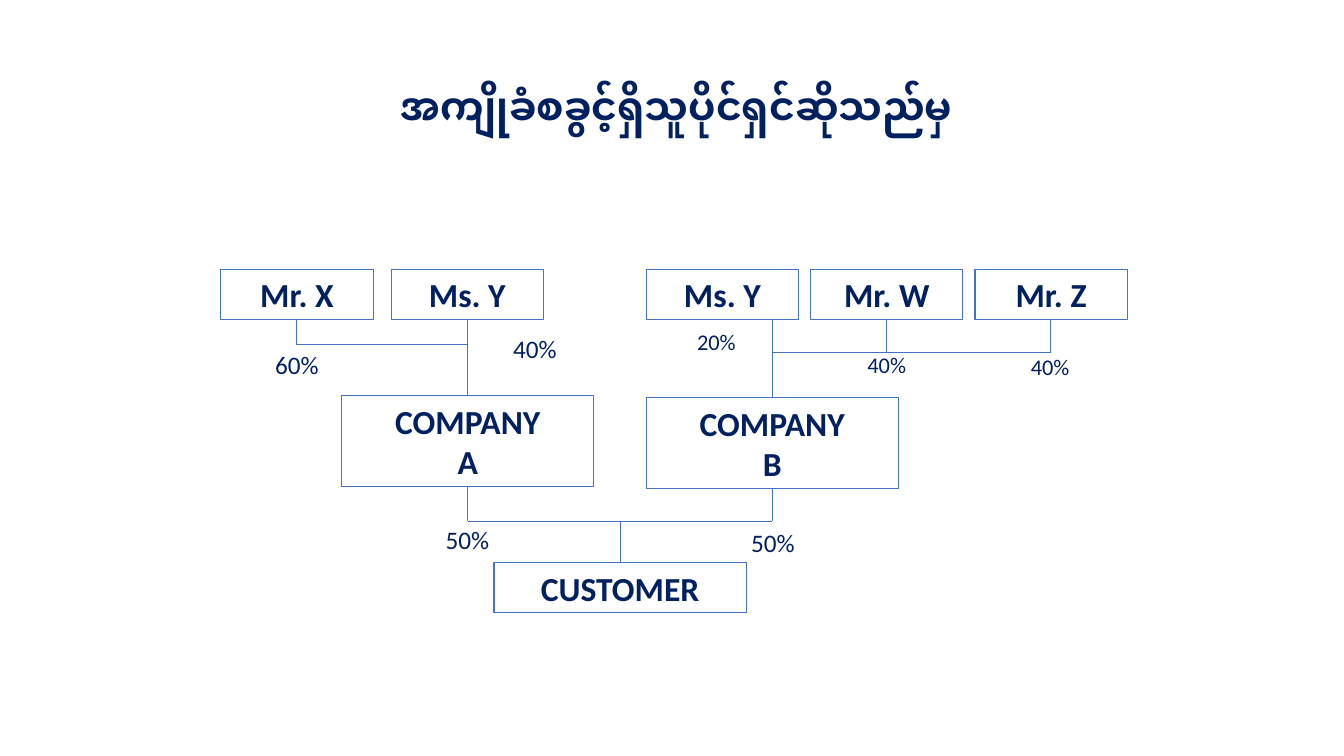
import pptx
import pptx.dml.color
import pptx.enum.shapes
import pptx.enum.text
import pptx.oxml.ns
import pptx.util
import lxml.etree

NAVY = pptx.dml.color.RGBColor(0x00, 0x20, 0x60)
BLUE = pptx.dml.color.RGBColor(0x44, 0x72, 0xC4)
EMU_PER_PX = 9144  # 100 px to the inch


def px(length):
    return pptx.util.Emu(length * EMU_PER_PX)


class OwnershipChart:
    """Draws on one slide; all lengths are whole px."""

    def __init__(self, slide):
        self.shapes = slide.shapes

    def set_text(self, shape, lines, size, font="Calibri", bold=False):
        frame = shape.text_frame
        frame.word_wrap = True
        frame.text = "\n".join(lines)
        for paragraph in frame.paragraphs:
            paragraph.alignment = pptx.enum.text.PP_ALIGN.CENTER
            paragraph.font.name = font
            paragraph.font.size = pptx.util.Pt(size)
            paragraph.font.bold = bold
            paragraph.font.color.rgb = NAVY

    def label(self, left, top, width, height, text, size, **style):
        label = self.shapes.add_textbox(px(left), px(top), px(width), px(height))
        self.set_text(label, [text], size, **style)

    def box(self, left, top, width, height, *lines):
        box = self.shapes.add_shape(
            pptx.enum.shapes.MSO_SHAPE.RECTANGLE,
            px(left), px(top), px(width), px(height))
        box.shadow.inherit = False
        box.fill.background()
        box.line.color.rgb = BLUE
        box.line.width = pptx.util.Pt(0.75)
        self.set_text(box, lines, 24, bold=True)

    def line(self, x1, y1, x2, y2):
        line = self.shapes.add_connector(
            pptx.enum.shapes.MSO_CONNECTOR.STRAIGHT, px(x1), px(y1), px(x2), px(y2))
        line.line.color.rgb = BLUE
        line.line.width = pptx.util.Pt(0.5)
        lxml.etree.SubElement(line._element.spPr, pptx.oxml.ns.qn("a:effectLst"))


def main():
    deck = pptx.Presentation()
    deck.slide_width, deck.slide_height = px(1333), px(750)
    chart = OwnershipChart(deck.slides.add_slide(deck.slide_layouts[6]))

    chart.label(217, 76, 908, 57, "အကျိုးခံစားခွင့်ရှိသူပိုင်ရှင်ဆိုသည်မှာ", 28,
                font="Roboto", bold=True)

    owner_top, owner_bottom = 267, 317
    for left, owner in ((219, "Mr. X"), (388, "Ms. Y"), (641, "Ms. Y"),
                        (804, "Mr. W"), (967, "Mr. Z")):
        chart.box(left, owner_top, 151, owner_bottom - owner_top, owner)

    # Each company: letter, centre, top, rail height, centres of its other owners
    company_height, customer_rail, customer_top = 91, 517, 558
    companies = (("A", 464, 392, 342, (294,)),
                 ("B", 766, 394, 350, (879, 1042)))
    for letter, centre, top, rail, partners in companies:
        chart.box(centre - 125, top, 250, company_height, "COMPANY", letter)
        chart.line(centre, owner_bottom, centre, top)
        for partner in partners:
            chart.line(partner, owner_bottom, partner, rail)
        chart.line(centre, rail, partners[-1], rail)
        chart.line(centre, top + company_height, centre, customer_rail)

    chart.box(490, customer_top, 250, 50, "CUSTOMER")
    chart.line(464, customer_rail, 766, customer_rail)
    chart.line(615, customer_rail, 615, customer_top)

    for left, top, share in ((257, 342, "60%"), (493, 326, "40%"),
                             (426, 515, "50%"), (729, 518, "50%")):
        chart.label(left, top, 75, 40, share, 18)
    for left, top, share in ((667, 321, "20%"), (836, 343, "40%"), (998, 345, "40%")):
        chart.label(left, top, 87, 37, share, 16)

    deck.save("out.pptx")


if __name__ == "__main__":
    main()
